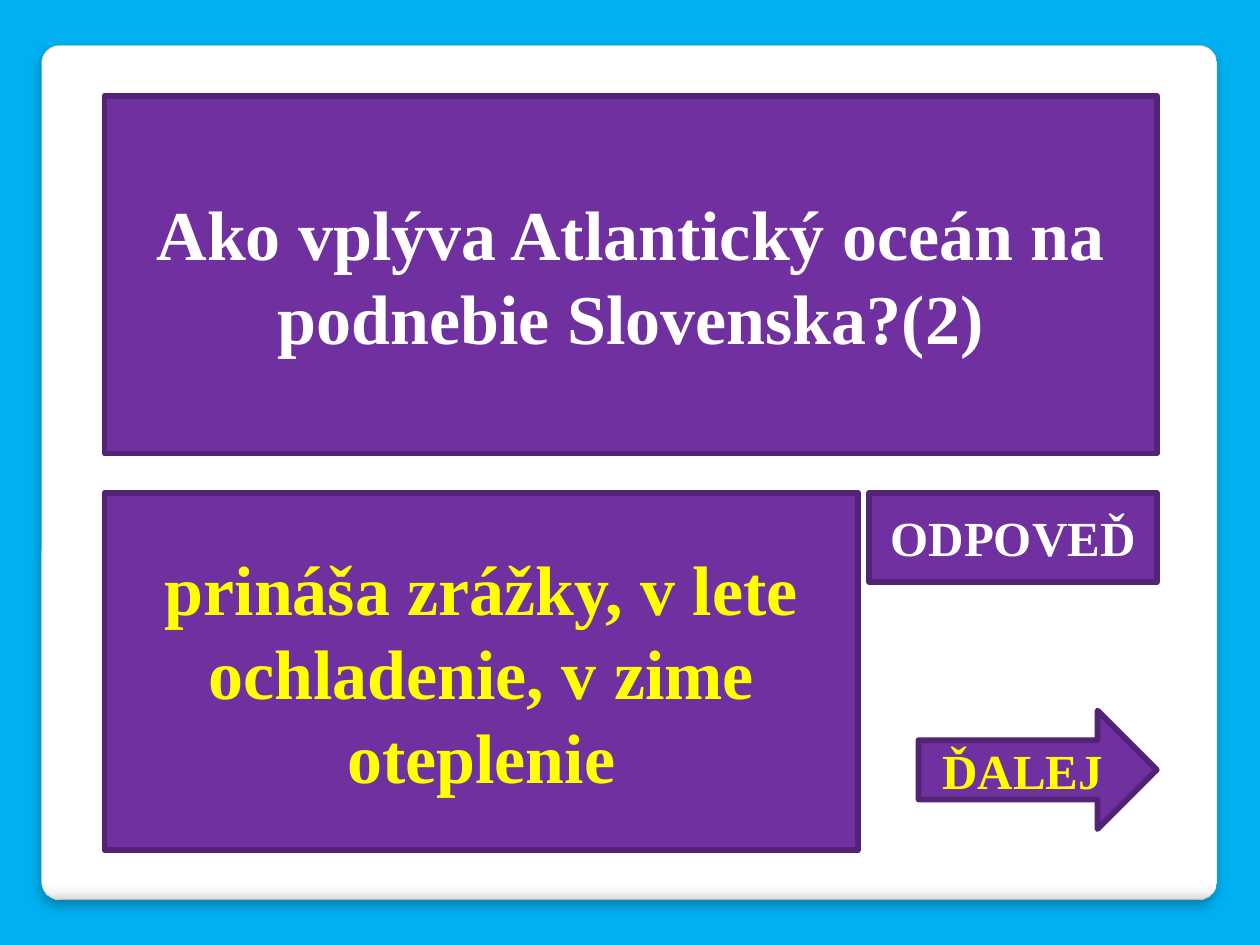
from lxml.etree import SubElement
from pptx import Presentation
from pptx.dml.color import RGBColor
from pptx.enum.shapes import MSO_SHAPE as Preset
from pptx.enum.text import MSO_ANCHOR as Anchor, PP_ALIGN as Align
from pptx.oxml.ns import qn
from pptx.util import Inches, Pt

COLORS = {
    "background": "00B0F0", "card_edge": "A4A4A4", "shadow": "000000",
    "panel": "7030A0", "panel_edge": "532476",
    "white": "FFFFFF", "yellow": "FFFF00",
}
CARD_STOPS = [(0, "FFFFFF"), (98, "FFFFFF"), (99, "F7F7F7"), (100, "DADADA")]
FONT = "Times New Roman"


def rgb(name):
    return RGBColor.from_string(COLORS[name])


def add_outlined(slide, preset, box, edge, weight):
    shape = slide.shapes.add_shape(preset, *(Inches(length) for length in box))
    shape.shadow.inherit = False
    shape.line.color.rgb = rgb(edge)
    shape.line.width = Pt(weight)
    return shape


def add_card(slide, box):
    """Rounded white card with a shaded lower edge and a soft shadow."""
    card = add_outlined(slide, Preset.ROUNDED_RECTANGLE, box, "card_edge", 0.16)
    card.adjustments[0] = 0.021
    card.fill.gradient()
    card.fill.gradient_angle = 270
    properties = card._element.spPr
    stops = properties.find(".//" + qn("a:gsLst"))
    stops.clear()
    for percent, color in CARD_STOPS:
        stop = SubElement(stops, qn("a:gs"), pos=str(percent * 1000))
        SubElement(stop, qn("a:srgbClr"), val=color)
    shadow = SubElement(
        properties.find(qn("a:effectLst")), qn("a:outerShdw"),
        blurRad=str(Pt(6)), dist=str(Pt(4)), dir="5400000", rotWithShape="0")
    tint = SubElement(shadow, qn("a:srgbClr"), val=COLORS["shadow"])
    SubElement(tint, qn("a:alpha"), val="25000")


def add_panel(slide, box, text, size, color, preset=Preset.RECTANGLE):
    panel = add_outlined(slide, preset, box, "panel_edge", 3.35)
    panel.fill.solid()
    panel.fill.fore_color.rgb = rgb("panel")
    frame = panel.text_frame
    frame.word_wrap = True
    frame.vertical_anchor = Anchor.MIDDLE
    paragraph = frame.paragraphs[0]
    paragraph.alignment = Align.CENTER
    run = paragraph.add_run()
    run.text = text
    for attribute, value in {"name": FONT, "size": Pt(size), "bold": True}.items():
        setattr(run.font, attribute, value)
    run.font.color.rgb = rgb(color)


def add_quiz(slide, left, top, width, height):
    """Question above; answer below it, beside the two button panels."""
    panel_height = 2.84
    right = left + width
    lower = top + height - panel_height
    add_panel(slide, (left, top, width, panel_height),
              "Ako vplýva Atlantický oceán na podnebie Slovenska?(2)", 40, "white")
    add_panel(slide, (left, lower, 5.98, panel_height),
              "prináša zrážky, v lete ochladenie, v zime oteplenie", 40, "yellow")
    add_panel(slide, (right - 2.28, lower, 2.28, 0.71), "ODPOVEĎ", 28, "white")
    add_panel(slide, (right - 1.89, lower + 1.73, 1.89, 0.94),
              "ĎALEJ", 28, "yellow", Preset.RIGHT_ARROW)


def main():
    deck = Presentation()
    deck.slide_width, deck.slide_height = Inches(10), Inches(7.5)
    slide = deck.slides.add_slide(deck.slide_layouts[6])
    slide.background.fill.solid()
    slide.background.fill.fore_color.rgb = rgb("background")
    add_card(slide, (0.33, 0.36, 9.33, 6.78))
    add_quiz(slide, 0.83, 0.76, 8.35, 5.99)
    deck.save("out.pptx")


if __name__ == "__main__":
    main()
